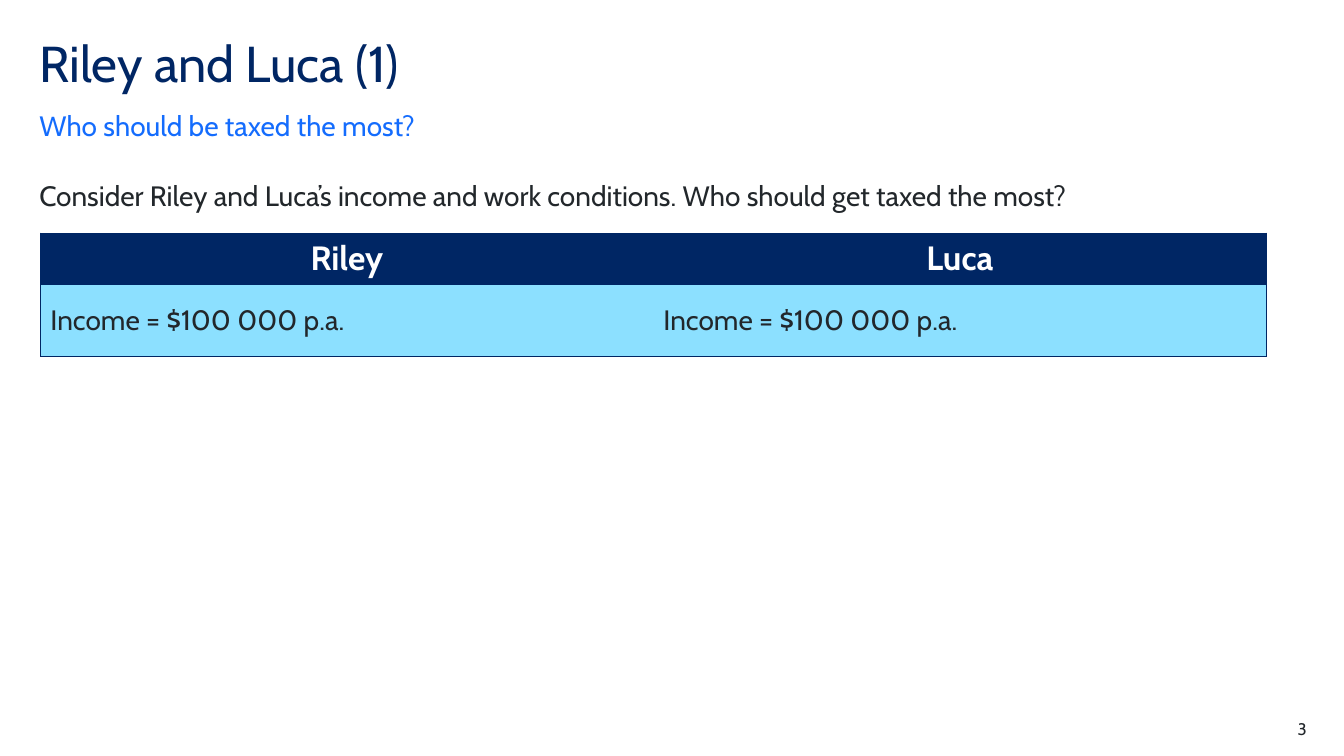
from lxml import etree
from pptx import Presentation
from pptx.dml.color import RGBColor
from pptx.enum.text import MSO_ANCHOR, PP_ALIGN
from pptx.oxml.ns import qn
from pptx.util import Inches, Pt

TOP, MID, BOTTOM = MSO_ANCHOR.TOP, MSO_ANCHOR.MIDDLE, MSO_ANCHOR.BOTTOM
LEFT, CENTER, RIGHT = PP_ALIGN.LEFT, PP_ALIGN.CENTER, PP_ALIGN.RIGHT
FONT = "Cabin"
COLORS = {"navy": "002664", "blue": "146CFD", "sky": "8CE0FF",
          "ink": "22272B", "white": "FFFFFF"}

# Content: text, (left, top, width, height), size, colour, anchor, align, line spacing
TEXTS = [
    ("Riley and Luca (1)", (0.39, 0.39, 11.02, 0.6), 36, "navy", TOP, LEFT, 0.9),
    ("Who should be taxed the most?", (0.39, 1.07, 11.02, 0.34), 20, "blue", BOTTOM, LEFT, 1),
    ("Consider Riley and Luca’s income and work conditions. Who should get taxed the most?",
     (0.39, 1.77, 12.56, 0.4), 20, "ink", TOP, LEFT, 1),
    ("3", (12.17, 7.13, 0.79, 0.2), 12, "ink", TOP, RIGHT, 1),
]
ROWS = [("Riley", "Luca"),
        ("Income = $100 000 p.a.", "Income = $100 000 p.a.")]
# Row looks: height, size, text colour, fill, bold, align, anchor
LOOKS = [(0.51, 24, "white", "navy", True, CENTER, TOP),
         (0.72, 20, "ink", "sky", False, LEFT, MID)]
TABLE = (0.4, 2.31, 12.16)


def rgb(name):
    return RGBColor.from_string(COLORS[name])


def style(para, size, color, align, bold=False):
    para.alignment = align
    font = para.runs[0].font
    font.name, font.size, font.bold = FONT, Pt(size), bold
    font.color.rgb = rgb(color)


def edge(cell, side, shown):
    line = etree.SubElement(cell._tc.get_or_add_tcPr(), qn(f"a:ln{side}"))
    if shown:
        line.set("w", str(Pt(0.5)))
        fill = etree.SubElement(line, qn("a:solidFill"))
        etree.SubElement(fill, qn("a:srgbClr")).set("val", COLORS["navy"])
    else:
        line.set("w", "0")
        etree.SubElement(line, qn("a:noFill"))


deck = Presentation()
deck.slide_width, deck.slide_height = Inches(13.33), Inches(7.5)
slide = deck.slides.add_slide(deck.slide_layouts[6])

# Title, subtitle, question and page number
for text, place, size, color, anchor, align, gap in TEXTS:
    frame = slide.shapes.add_textbox(*map(Inches, place)).text_frame
    frame.word_wrap = True
    frame.margin_left = frame.margin_right = frame.margin_top = frame.margin_bottom = 0
    frame.vertical_anchor = anchor
    frame.text = text
    para = frame.paragraphs[0]
    para.line_spacing = gap
    style(para, size, color, align)

# Income table
high = sum(look[0] for look in LOOKS)
count = len(ROWS[0])
table = slide.shapes.add_table(len(ROWS), count, *map(Inches, (*TABLE, high))).table
for col in table.columns:
    col.width = Inches(TABLE[2] / count)
for r, (row, look) in enumerate(zip(ROWS, LOOKS)):
    tall, size, color, fill, bold, align, anchor = look
    table.rows[r].height = Inches(tall)
    for c, text in enumerate(row):
        cell = table.cell(r, c)
        cell.text = text
        cell.vertical_anchor = anchor
        style(cell.text_frame.paragraphs[0], size, color, align, bold)
        # Outer frame and row rules, no rule between columns
        for side, shown in (("L", c == 0), ("R", c == count - 1), ("T", True), ("B", True)):
            edge(cell, side, shown)
        cell.fill.solid()
        cell.fill.fore_color.rgb = rgb(fill)

deck.save("out.pptx")
